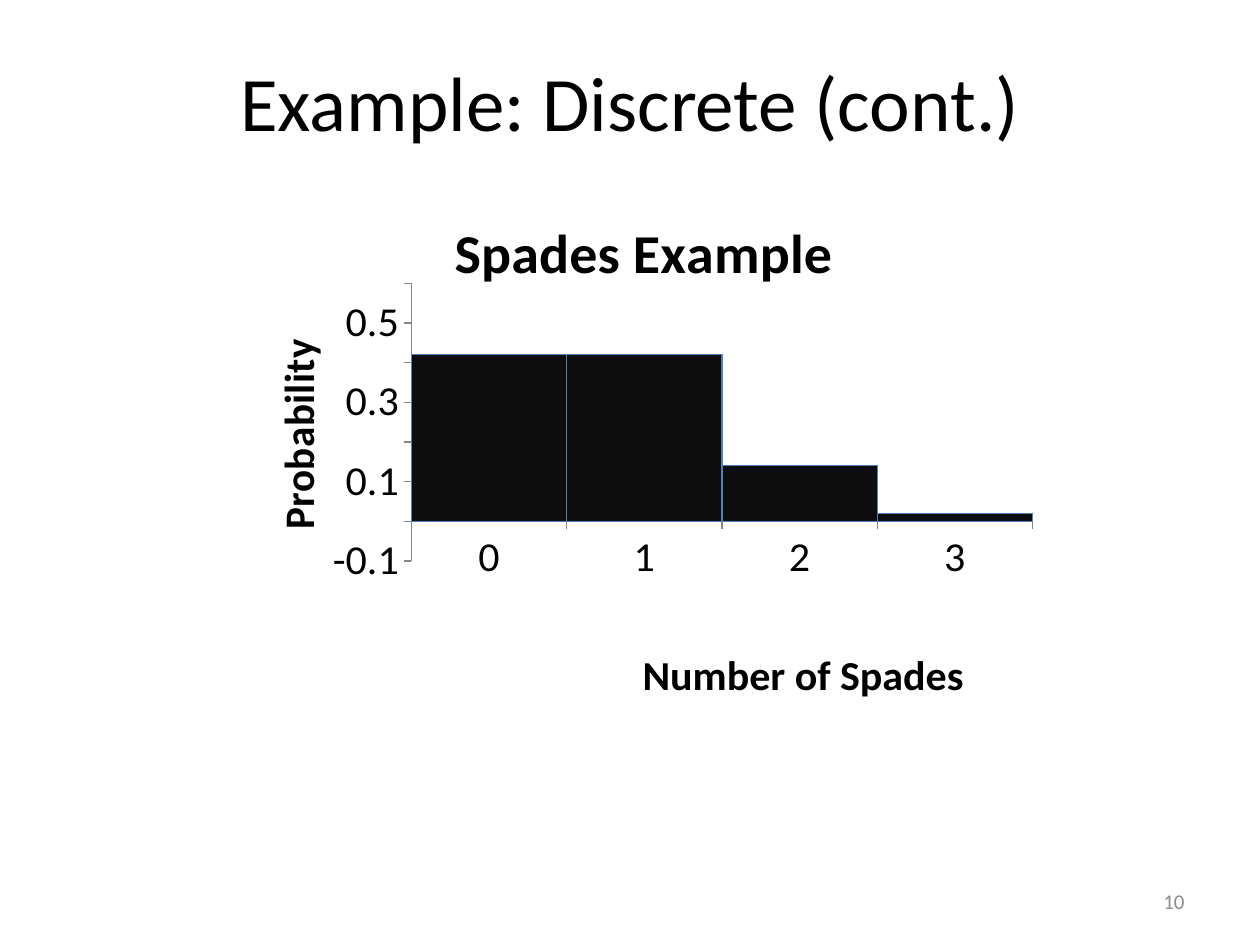
import pptx
import pptx.chart.data
import pptx.dml.color
import pptx.enum.chart
import pptx.enum.text
import pptx.oxml
import pptx.oxml.ns
import pptx.util
from pptx.util import Cm

BLACK = pptx.dml.color.RGBColor(0x00, 0x00, 0x00)
BAR_FILL = pptx.dml.color.RGBColor(0x0D, 0x0D, 0x0D)
BAR_LINE = pptx.dml.color.RGBColor(0x4F, 0x81, 0xBD)
AXIS_GRAY = pptx.dml.color.RGBColor(0x86, 0x86, 0x86)
NUMBER_GRAY = pptx.dml.color.RGBColor(0x8C, 0x8C, 0x8C)
FONT_NAME = "Calibri"


def format_font(font, size, color=BLACK, bold=False):
    font.name = FONT_NAME
    font.size = pptx.util.Pt(size)
    font.color.rgb = color
    font.bold = bold


def format_text(shape, text, size, color, alignment):
    text_frame = shape.text_frame
    text_frame.text = text
    text_frame.word_wrap = True
    text_frame.vertical_anchor = pptx.enum.text.MSO_ANCHOR.MIDDLE
    paragraph = text_frame.paragraphs[0]
    paragraph.alignment = alignment
    format_font(paragraph.runs[0].font, size, color)


def place_in_chart(element, index, target=None, **fractions):
    for old_layout in element.findall(pptx.oxml.ns.qn("c:layout")):
        element.remove(old_layout)
    settings = '<c:xMode val="edge"/><c:yMode val="edge"/>'
    if target:
        settings = f'<c:layoutTarget val="{target}"/>' + settings
    settings += "".join(f'<c:{name} val="{value}"/>' for name, value in fractions.items())
    layout = pptx.oxml.parse_xml(
        f'<c:layout {pptx.oxml.ns.nsdecls("c")}>'
        f"<c:manualLayout>{settings}</c:manualLayout></c:layout>"
    )
    element.insert(index, layout)


def add_chart_title(owner, text, size, x, y):
    title = owner.chart_title if hasattr(owner, "chart_title") else owner.axis_title
    title.text_frame.text = text
    format_font(title.text_frame.paragraphs[0].runs[0].font, size, bold=True)
    place_in_chart(title._element, 1, x=x, y=y)
    return title


def format_axis(axis):
    axis.has_major_gridlines = False
    axis.major_tick_mark = pptx.enum.chart.XL_TICK_MARK.OUTSIDE
    axis.minor_tick_mark = pptx.enum.chart.XL_TICK_MARK.NONE
    axis.format.line.color.rgb = AXIS_GRAY
    axis.format.line.width = pptx.util.Pt(0.75)
    format_font(axis.tick_labels.font, 24)


def add_histogram(slide):
    chart_data = pptx.chart.data.CategoryChartData()
    chart_data.categories = ["0", "1", "2", "3"]
    chart_data.add_series("Series 1", [0.42, 0.42, 0.14, 0.02])
    chart = slide.shapes.add_chart(
        pptx.enum.chart.XL_CHART_TYPE.COLUMN_CLUSTERED,
        Cm(4.45), Cm(3.6), Cm(16.7), Cm(10.8), chart_data,
    ).chart
    format_font(chart.font, 10)
    chart.has_legend = False

    plot = chart.plots[0]
    plot.gap_width = 0
    plot.vary_by_categories = False
    bars = plot.series[0].format
    bars.fill.solid()
    bars.fill.fore_color.rgb = BAR_FILL
    bars.line.color.rgb = BAR_LINE
    bars.line.width = pptx.util.Pt(0.75)

    format_axis(chart.category_axis)
    format_axis(chart.value_axis)
    chart.value_axis.minimum_scale = -0.1
    chart.value_axis.maximum_scale = 0.6
    chart.value_axis.major_unit = 0.1
    chart.value_axis.tick_labels.number_format = "General"
    chart.value_axis.tick_labels.number_format_is_linked = False

    add_chart_title(chart, "Spades Example", 32, 0.27, 0.05)
    add_chart_title(chart.category_axis, "Number of Spades", 24, 0.5, 0.88)
    probability = add_chart_title(chart.value_axis, "Probability", 24, 0.05, 0.3)
    body = probability.text_frame._txBody.bodyPr
    body.set("rot", "-5400000")
    body.set("vert", "horz")
    plot_area = chart._chartSpace.chart.plotArea
    place_in_chart(plot_area, 0, "inner", x=0.23, y=0.2, w=0.75, h=0.53)


def add_title(slide, text):
    title = slide.shapes.title
    title.left, title.top, title.width, title.height = Cm(1.27), Cm(0.43), Cm(22.86), Cm(3.18)
    format_text(title, text, 44, BLACK, pptx.enum.text.PP_ALIGN.CENTER)


def add_slide_number(slide, text):
    box = slide.shapes.add_textbox(Cm(18.2), Cm(17.65), Cm(5.93), Cm(1.02))
    format_text(box, text, 12, NUMBER_GRAY, pptx.enum.text.PP_ALIGN.RIGHT)


def main():
    presentation = pptx.Presentation()
    presentation.slide_width = Cm(25.4)
    presentation.slide_height = Cm(19.05)
    slide = presentation.slides.add_slide(presentation.slide_layouts[5])
    add_title(slide, "Example: Discrete (cont.)")
    add_histogram(slide)
    add_slide_number(slide, "10")
    presentation.save("out.pptx")


if __name__ == "__main__":
    main()
